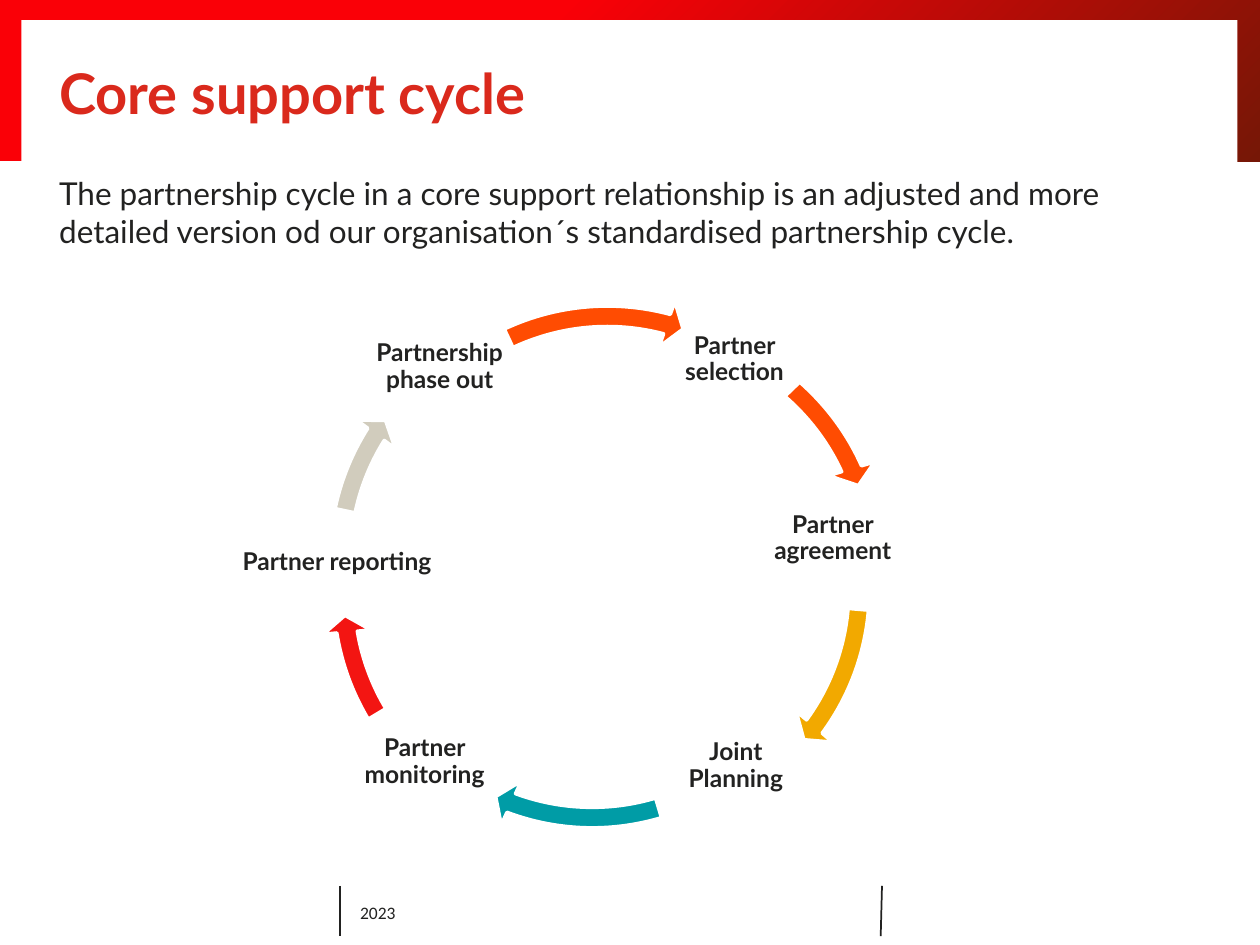
from dataclasses import dataclass

from lxml import etree
from pptx import Presentation
from pptx.dml.color import RGBColor
from pptx.enum.shapes import MSO_CONNECTOR, MSO_SHAPE
from pptx.enum.text import MSO_ANCHOR, PP_ALIGN
from pptx.oxml.ns import qn
from pptx.util import Inches, Pt


@dataclass(frozen=True)
class Theme:
    font: str = "Lato"
    footer_font: str = "Calibri"
    title_size: int = 32
    body_size: int = 18
    label_size: int = 14
    footer_size: int = 10
    title: str = "DA291C"
    ink: str = "222221"
    white: str = "FFFFFF"
    band_start: str = "FA0007"
    band_end: str = "761706"
    orange: str = "FF4C02"
    yellow: str = "F2A900"
    teal: str = "009CA6"
    red: str = "F31512"
    sand: str = "D1CCBD"


THEME = Theme()
RING = 4.06

# Label, its box within the cycle: left, top, width, height
STAGES = [
    ("Partner selection", (3.35, 0.28, 1.16, 0.51)),
    ("Partner agreement", (3.96, 1.54, 1.5, 0.83)),
    ("Joint Planning", (3.33, 3.41, 1.22, 0.7)),
    ("Partner monitoring", (0.92, 3.35, 1.1, 0.76)),
    ("Partner reporting", (0, 1.73, 1.55, 0.83)),
    ("Partnership phase out", (1.05, 0.18, 1.08, 0.83)),
]
# Left, top and width of the ring, start and end angle in degrees, colour
ARROWS = [
    (0.81, 0.07, 4.39, 316.1, 339.33, THEME.orange),
    (1.05, 0.33, RING, 4.87, 36.22, THEME.yellow),
    (0.77, 0.3, RING, 73.35, 110.43, THEME.teal),
    (0.64, 0.37, RING, 149.03, 170.7, THEME.red),
    (0.61, 0.08, RING, 191.79, 212.28, THEME.sand),
    (0.89, 0, RING, 244.82, 284.93, THEME.orange),
]


def rgb(value):
    return RGBColor.from_string(value)


def add_text(slide, text, box, size, color=THEME.ink, font=THEME.font, bold=False,
             align=PP_ALIGN.LEFT, anchor=MSO_ANCHOR.TOP, inset=0, line_spacing=None):
    frame = slide.shapes.add_textbox(*map(Inches, box)).text_frame
    frame.word_wrap = True
    frame.vertical_anchor = anchor
    frame.margin_left = frame.margin_right = Inches(inset)
    frame.margin_top = frame.margin_bottom = Inches(inset)
    paragraph = frame.paragraphs[0]
    paragraph.alignment = align
    paragraph.line_spacing = line_spacing
    run = paragraph.add_run()
    run.text = text
    run.font.name, run.font.size, run.font.bold = font, Pt(size), bold
    run.font.color.rgb = rgb(color)


def add_panel(slide, kind, box):
    panel = slide.shapes.add_shape(kind, *map(Inches, box))
    panel.shadow.inherit = False
    panel.line.fill.background()
    return panel


def add_divider(slide, start, end):
    divider = slide.shapes.add_connector(MSO_CONNECTOR.STRAIGHT, *map(Inches, start + end))
    divider.line.color.rgb = rgb(THEME.ink)
    divider.line.width = Pt(1)
    etree.SubElement(divider._element.spPr, qn("a:effectLst"))


def add_frame(slide, box):
    """Gradient band with a white panel that leaves a border on three sides."""
    left, top, width, height = box
    band = add_panel(slide, MSO_SHAPE.RECTANGLE, box)
    band.fill.gradient()
    band.fill.gradient_angle = 315
    stops = ((0.4, THEME.band_start), (1, THEME.band_end))
    for stop, (position, color) in zip(band.fill.gradient_stops, stops):
        stop.position = position
        stop.color.rgb = rgb(color)
    inner = add_panel(slide, MSO_SHAPE.RECTANGLE,
                      (left + 0.17, top + 0.16, width - 0.35, height - 0.1))
    inner.fill.solid()
    inner.fill.fore_color.rgb = rgb(THEME.white)


def add_header(slide, box):
    left, top, width, _ = box
    add_text(slide, "Core support cycle", (left, top, width, 0.55), THEME.title_size,
             color=THEME.title, bold=True, anchor=MSO_ANCHOR.MIDDLE)
    add_text(slide, "The partnership cycle in a core support relationship is an adjusted "
             "and more detailed version od our organisation´s standardised partnership cycle.",
             (left, top + 0.92, width, 0.69), THEME.body_size)


def add_cycle_arrow(slide, box, start, end, color):
    arrow = add_panel(slide, MSO_SHAPE.CIRCULAR_ARROW, box)
    arrow.fill.solid()
    arrow.fill.fore_color.rgb = rgb(color)
    arrow.line.color.rgb = rgb(THEME.white)
    arrow.line.width = Pt(2)
    per_degree = 0.6  # one degree in adjustment units
    values = (0.04, 4.17 * per_degree, end * per_degree, start * per_degree, 0.047)
    for index, value in enumerate(values):
        arrow.adjustments[index] = value


def add_cycle(slide, box):
    left, top = box[:2]
    for (label, (x, y, w, h)), (ring_x, ring_y, ring_w, start, end, color) in zip(STAGES, ARROWS):
        add_text(slide, label, (left + x, top + y, w, h), THEME.label_size, bold=True,
                 align=PP_ALIGN.CENTER, anchor=MSO_ANCHOR.MIDDLE, inset=0.02,
                 line_spacing=0.9)
        add_cycle_arrow(slide, (left + ring_x, top + ring_y, ring_w, RING), start, end, color)


def add_footer(slide, box):
    left, top, width, height = box
    for x, lean in ((left, 0), (left + width, 0.01)):
        add_divider(slide, (x, top), (x - lean, top + height))
    add_text(slide, "2023", (left + 0.06, top + 0.01, width - 0.12, height),
             THEME.footer_size, font=THEME.footer_font, anchor=MSO_ANCHOR.MIDDLE, inset=0.1)


def main():
    deck = Presentation()
    deck.slide_width, deck.slide_height = Inches(10), Inches(7.5)
    slide = deck.slides.add_slide(deck.slide_layouts[6])
    add_frame(slide, (0, 0, 10, 1.28))
    add_header(slide, (0.47, 0.46, 9.06, 1.61))
    add_cycle(slide, (1.9, 2.32, 5.46, 4.43))
    add_footer(slide, (2.7, 7.03, 4.3, 0.4))
    deck.save("out.pptx")


if __name__ == "__main__":
    main()
